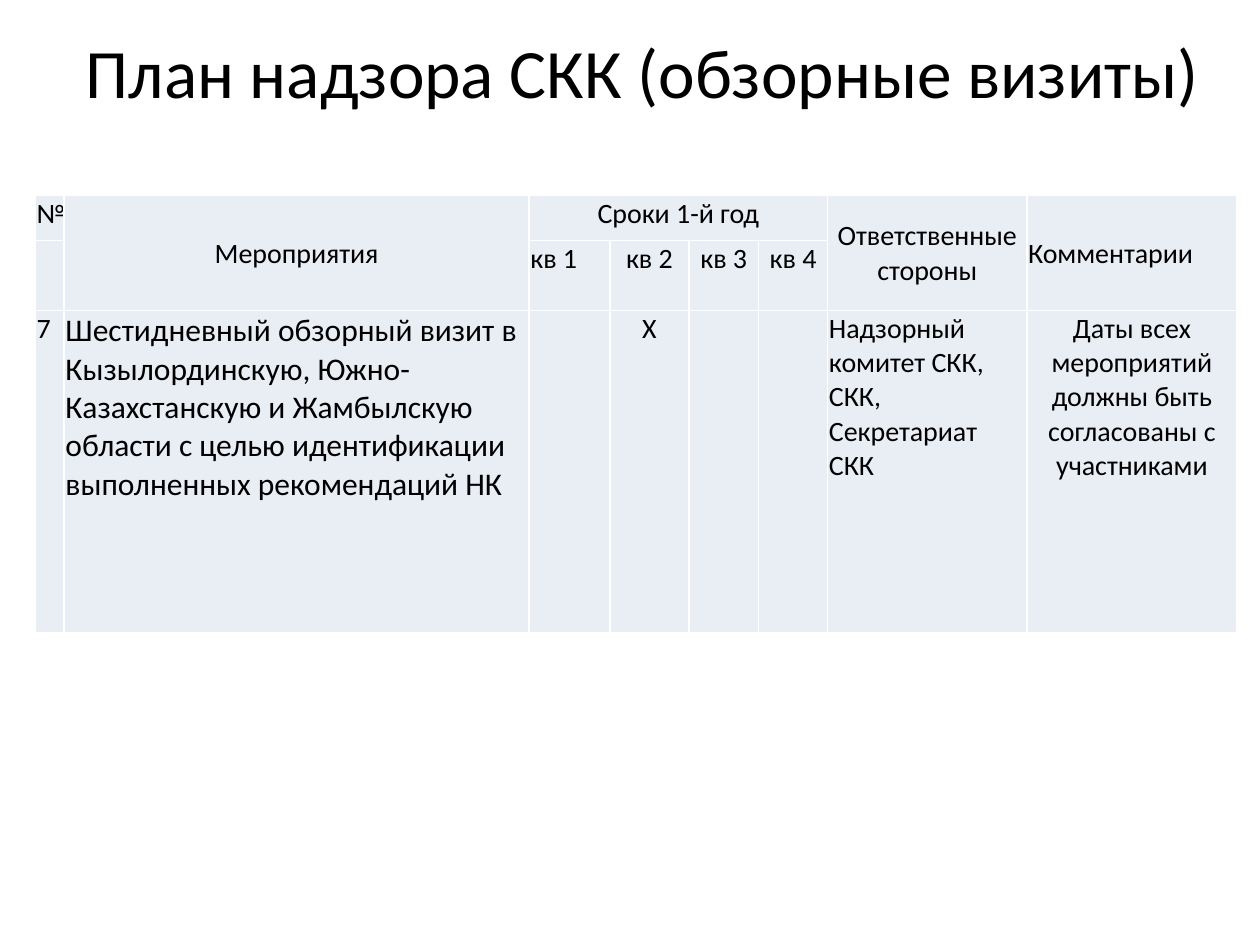
from dataclasses import dataclass

from lxml.etree import SubElement
from pptx import Presentation
from pptx.dml.color import RGBColor
from pptx.enum.text import MSO_ANCHOR as Anchor, MSO_AUTO_SIZE as AutoSize, PP_ALIGN as Align
from pptx.oxml.ns import qn
from pptx.slide import Slide
from pptx.table import Table, _Cell as Cell
from pptx.text.text import TextFrame
from pptx.util import Inches, Pt


@dataclass(frozen=True)
class Theme:
    """Colours, font and type sizes of the slide."""
    font: str = "Calibri"
    ink: str = "000000"
    cell_fill: str = "E9EDF4"
    border: str = "FFFFFF"
    border_width: float = 1
    title_size: float = 39.6
    table_size: float = 16
    activity_size: float = 18


@dataclass(frozen=True)
class Entry:
    """Text of one table cell with its grid place, span and format."""
    row: int
    column: int
    text: str
    align: Align = Align.LEFT
    anchor: Anchor = Anchor.TOP
    rows: int = 1
    columns: int = 1
    size: float = Theme.table_size


THEME = Theme()
SLIDE_WIDTH, SLIDE_HEIGHT = Inches(10), Inches(7.5)
TABLE_LEFT, TABLE_TOP = 0.28, 1.55
COLUMN_WIDTHS = (0.23, 3.69, 0.64, 0.63, 0.55, 0.55, 1.58, 1.67)
ROW_HEIGHTS = (0.36, 0.55, 2.56)
QUARTERS = range(1, 5)
FIRST_QUARTER_COLUMN = 2

ENTRIES = [
    Entry(0, 0, "№"),
    Entry(0, 1, "Мероприятия", Align.CENTER, Anchor.MIDDLE, rows=2),
    Entry(0, 2, "Сроки 1-й год", Align.CENTER, columns=len(QUARTERS)),
    Entry(0, 6, "Ответственные стороны", Align.CENTER, Anchor.MIDDLE, rows=2),
    Entry(0, 7, "Комментарии", anchor=Anchor.MIDDLE, rows=2),
    *(Entry(1, FIRST_QUARTER_COLUMN + quarter - 1, f"кв {quarter}",
            Align.LEFT if quarter == 1 else Align.CENTER) for quarter in QUARTERS),
    Entry(2, 0, "7"),
    Entry(2, 1, "Шестидневный обзорный визит в Кызылординскую, Южно-Казахстанскую и "
                "Жамбылскую области с целью идентификации выполненных рекомендаций НК",
          size=THEME.activity_size),
    Entry(2, 3, "Х", Align.CENTER),
    Entry(2, 6, "Надзорный комитет СКК, СКК, Секретариат СКК"),
    Entry(2, 7, "Даты всех мероприятий должны быть согласованы с участниками", Align.CENTER),
]


def write_text(frame: TextFrame, text: str, *, size: float, align: Align) -> None:
    """Put one formatted paragraph into a text frame."""
    paragraph = frame.paragraphs[0]
    paragraph.alignment = align
    run = paragraph.add_run()
    run.text = text
    run.font.name = THEME.font
    run.font.size = Pt(size)
    run.font.color.rgb = RGBColor.from_string(THEME.ink)


def style_cell(cell: Cell) -> None:
    """Give a cell its borders, fill and narrow margins."""
    properties = cell._tc.get_or_add_tcPr()
    for side in ("a:lnL", "a:lnR", "a:lnT", "a:lnB"):
        line = SubElement(properties, qn(side), w=str(Pt(THEME.border_width)))
        SubElement(SubElement(line, qn("a:solidFill")), qn("a:srgbClr"), val=THEME.border)
    cell.fill.solid()
    cell.fill.fore_color.rgb = RGBColor.from_string(THEME.cell_fill)
    cell.margin_left = cell.margin_right = cell.margin_top = Inches(0.01)
    cell.margin_bottom = 0


def fill_entry(table: Table, entry: Entry) -> None:
    """Merge the cells of an entry and write its text."""
    cell = table.cell(entry.row, entry.column)
    if entry.rows > 1 or entry.columns > 1:
        cell.merge(table.cell(entry.row + entry.rows - 1, entry.column + entry.columns - 1))
    cell.vertical_anchor = entry.anchor
    write_text(cell.text_frame, entry.text, size=entry.size, align=entry.align)


def add_title(slide: Slide, text: str) -> None:
    """Place and format the title placeholder."""
    title = slide.shapes.title
    title.left, title.top = int(SLIDE_WIDTH * 0.02), int(SLIDE_HEIGHT * 0.04)
    title.width, title.height = int(SLIDE_WIDTH * 0.98), int(SLIDE_HEIGHT * 0.07)
    title.text_frame.auto_size = AutoSize.NONE
    title.text_frame.vertical_anchor = Anchor.MIDDLE
    write_text(title.text_frame, text, size=THEME.title_size, align=Align.CENTER)


def add_plan(slide: Slide) -> None:
    """Add the table of supervision visits."""
    table = slide.shapes.add_table(
        len(ROW_HEIGHTS), len(COLUMN_WIDTHS), Inches(TABLE_LEFT), Inches(TABLE_TOP),
        Inches(sum(COLUMN_WIDTHS)), Inches(sum(ROW_HEIGHTS))).table
    table.first_row = table.horz_banding = False
    for column, width in zip(table.columns, COLUMN_WIDTHS):
        column.width = Inches(width)
    for row, height in zip(table.rows, ROW_HEIGHTS):
        row.height = Inches(height)
    for cell in table.iter_cells():
        style_cell(cell)
    for entry in ENTRIES:
        fill_entry(table, entry)


def main() -> None:
    """Build and save the presentation."""
    presentation = Presentation()
    presentation.slide_width, presentation.slide_height = SLIDE_WIDTH, SLIDE_HEIGHT
    slide = presentation.slides.add_slide(presentation.slide_layouts[5])
    add_title(slide, "План надзора СКК (обзорные визиты)")
    add_plan(slide)
    presentation.save("out.pptx")


if __name__ == "__main__":
    main()
